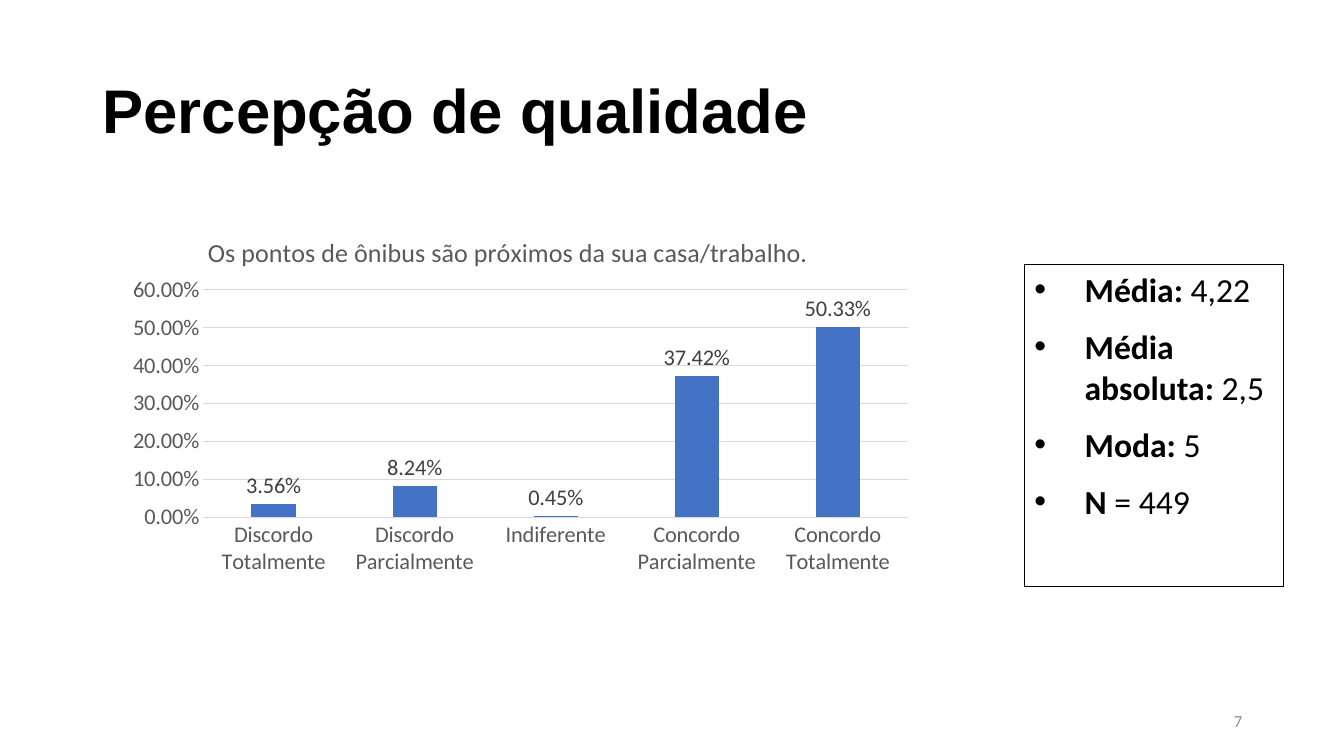
from lxml import etree
from pptx import Presentation
from pptx.chart.data import CategoryChartData
from pptx.dml.color import RGBColor
from pptx.enum.chart import XL_CHART_TYPE, XL_LABEL_POSITION, XL_TICK_MARK
from pptx.enum.shapes import MSO_SHAPE
from pptx.enum.text import MSO_ANCHOR, PP_ALIGN
from pptx.oxml import parse_xml
from pptx.oxml.ns import nsdecls, qn
from pptx.util import Inches, Pt

COLUMNS = XL_CHART_TYPE.COLUMN_CLUSTERED
OUTSIDE_END = XL_LABEL_POSITION.OUTSIDE_END
NO_TICK = XL_TICK_MARK.NONE
RECTANGLE = MSO_SHAPE.RECTANGLE
TOP, MIDDLE = MSO_ANCHOR.TOP, MSO_ANCHOR.MIDDLE
LEFT, RIGHT = PP_ALIGN.LEFT, PP_ALIGN.RIGHT

BLACK = RGBColor(0x00, 0x00, 0x00)
PAGE_GRAY = RGBColor(0x8C, 0x8C, 0x8C)
AXIS_GRAY = RGBColor(0x59, 0x59, 0x59)
LABEL_GRAY = RGBColor(0x40, 0x40, 0x40)
GRID_GRAY = RGBColor(0xD9, 0xD9, 0xD9)
BAR_BLUE = RGBColor(0x44, 0x72, 0xC4)

HEADING = "Percepção de qualidade"
PAGE_NUMBER = "7"
STATISTICS = [
    ("Média:", " 4,22"),
    ("Média absoluta:", " 2,5"),
    ("Moda:", " 5"),
    ("N", " = 449"),
]
QUESTION = "Os pontos de ônibus são próximos da sua casa/trabalho."
ANSWERS = {
    "Discordo Totalmente": 0.0356,
    "Discordo Parcialmente": 0.0824,
    "Indiferente": 0.0045,
    "Concordo Parcialmente": 0.3742,
    "Concordo Totalmente": 0.5033,
}
PERCENT = "0.00%"

HEADING_AT = (0.92, 0.4, 11.5, 1.45)
PAGE_AT = (9.42, 6.95, 3, 0.4)
STATISTICS_AT = (10.16, 2.62, 2.57, 3.2)
CHART_AT = (1.13, 2.05, 8.04, 3.76)
# Fractions of the chart's width and height
QUESTION_LAYOUT = {"x": 0.11, "y": 0.06}
PLOT_LAYOUT = {"x": 0.11, "y": 0.22, "w": 0.87, "h": 0.6}


def inches(box):
    return [Inches(length) for length in box]


def set_font(font, size, color, name="Calibri", bold=False):
    values = {"size": Pt(size), "name": name, "bold": bold}
    for attribute, value in values.items():
        setattr(font, attribute, value)
    font.color.rgb = color


def add_line_of_text(slide, box, text, align, **font_values):
    frame = slide.shapes.add_textbox(*inches(box)).text_frame
    frame.word_wrap = True
    frame.vertical_anchor = MIDDLE
    paragraph = frame.paragraphs[0]
    paragraph.alignment = align
    run = paragraph.add_run()
    run.text = text
    set_font(run.font, **font_values)
    return paragraph


def add_bullet(paragraph, indent):
    properties = paragraph._p.get_or_add_pPr()
    properties.set("marL", str(indent))
    properties.set("indent", str(-indent))
    etree.SubElement(properties, qn("a:buFont")).set("typeface", "Arial")
    etree.SubElement(properties, qn("a:buChar")).set("char", "•")


def add_statistics(slide):
    panel = slide.shapes.add_shape(RECTANGLE, *inches(STATISTICS_AT))
    panel.shadow.inherit = False
    panel.fill.background()
    panel.line.color.rgb = BLACK
    panel.line.width = Pt(0.75)
    frame = panel.text_frame
    frame.word_wrap = True
    frame.vertical_anchor = TOP
    for index, statistic in enumerate(STATISTICS):
        paragraph = frame.add_paragraph() if index else frame.paragraphs[0]
        add_bullet(paragraph, Inches(0.5))
        paragraph.alignment = LEFT
        paragraph.space_after = Pt(12)
        set_font(paragraph.font, 24, BLACK)
        for text, bold in zip(statistic, (True, False)):
            run = paragraph.add_run()
            run.text = text
            set_font(run.font, 24, BLACK, bold=bold)


def place(element, fractions, before, target=""):
    """Fix the position of a chart part by a manual layout."""
    for old in element.findall(qn("c:layout")):
        element.remove(old)
    modes = "".join(f'<c:{axis}Mode val="edge"/>' for axis in "xy")
    values = "".join(f'<c:{key} val="{value}"/>' for key, value in fractions.items())
    layout = parse_xml(
        f'<c:layout {nsdecls("c")}><c:manualLayout>{target}{modes}{values}'
        "</c:manualLayout></c:layout>")
    element.insert(before, layout)


def add_answers(slide):
    data = CategoryChartData(number_format=PERCENT)
    data.categories = list(ANSWERS)
    data.add_series("Series 1", list(ANSWERS.values()))
    chart = slide.shapes.add_chart(COLUMNS, *inches(CHART_AT), data).chart
    set_font(chart.font, 16, BLACK)
    chart.has_legend = False

    chart.has_title = True
    question = chart.chart_title.text_frame.paragraphs[0].add_run()
    question.text = QUESTION
    set_font(question.font, 18.6, AXIS_GRAY)
    chart.chart_title.include_in_layout = False
    place(chart.chart_title._element, QUESTION_LAYOUT, 1)
    plot_area = chart._chartSpace.chart.plotArea
    place(plot_area, PLOT_LAYOUT, 0, '<c:layoutTarget val="inner"/>')

    for axis in (chart.category_axis, chart.value_axis):
        axis.major_tick_mark = axis.minor_tick_mark = NO_TICK
        set_font(axis.tick_labels.font, 16, AXIS_GRAY)
    chart.value_axis.format.line.fill.background()
    scale = {"minimum_scale": 0, "maximum_scale": 0.6, "major_unit": 0.1}
    for attribute, value in scale.items():
        setattr(chart.value_axis, attribute, value)
    for line in (chart.category_axis.format.line,
                 chart.value_axis.major_gridlines.format.line):
        line.color.rgb = GRID_GRAY
        line.width = Pt(0.75)

    plot = chart.plots[0]
    plot.gap_width, plot.overlap = 219, -27
    plot.vary_by_categories = False
    bars = plot.series[0]
    bars.format.fill.solid()
    bars.format.fill.fore_color.rgb = BAR_BLUE
    labels = bars.data_labels
    labels.show_value = True
    labels.position = OUTSIDE_END
    set_font(labels.font, 16, LABEL_GRAY)
    for numbers in (labels, chart.value_axis.tick_labels):
        numbers.number_format = PERCENT
        numbers.number_format_is_linked = False


def main():
    deck = Presentation()
    deck.slide_width, deck.slide_height = Inches(13.33), Inches(7.5)
    slide = deck.slides.add_slide(deck.slide_layouts[6])
    heading = add_line_of_text(slide, HEADING_AT, HEADING, LEFT,
                               size=44, color=BLACK, name="Arial", bold=True)
    heading.line_spacing = 0.9
    add_line_of_text(slide, PAGE_AT, PAGE_NUMBER, RIGHT, size=12, color=PAGE_GRAY)
    add_statistics(slide)
    add_answers(slide)
    deck.save("out.pptx")


if __name__ == "__main__":
    main()
